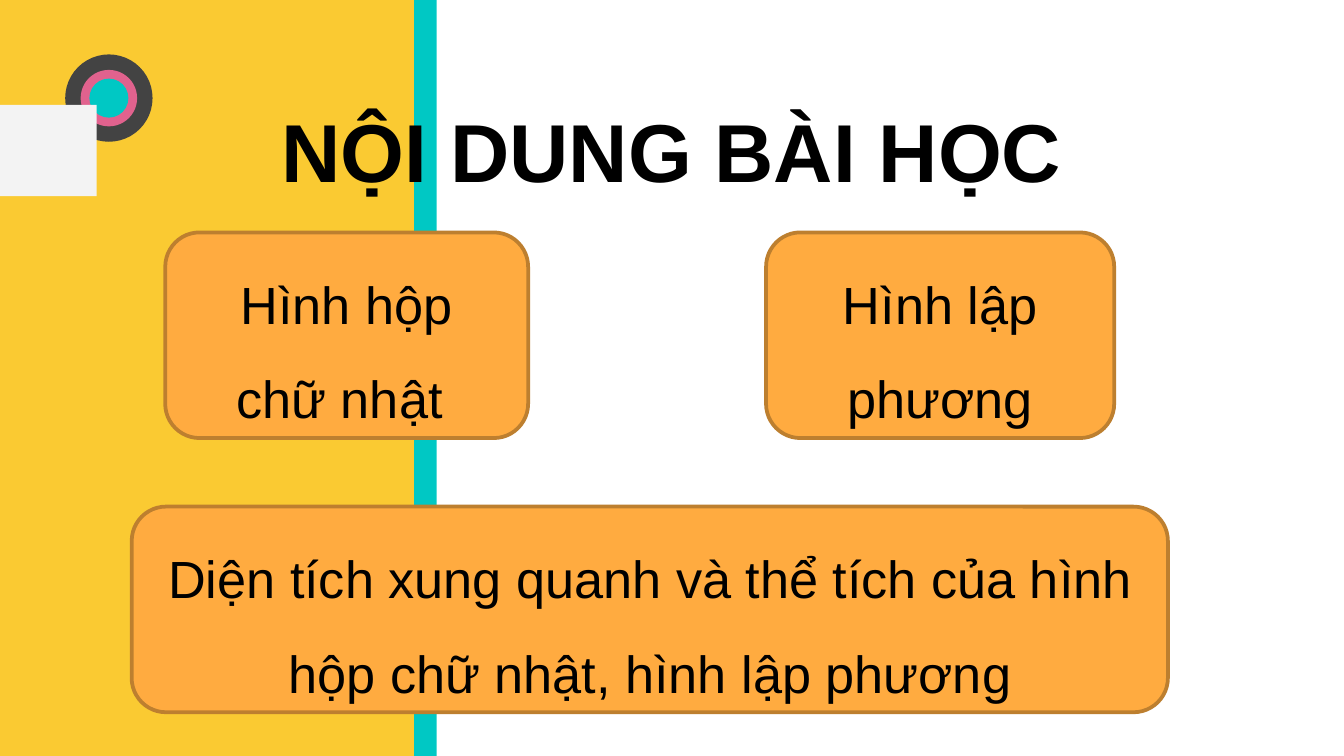
import pptx
import pptx.util
import pptx.dml.color
import pptx.enum.shapes
import pptx.enum.text
from dataclasses import dataclass
from pptx.util import Inches


@dataclass(frozen=True)
class Theme:
    font: str = "Arial"
    text: str = "000000"
    yellow: str = "FACA32"
    teal: str = "00C8C4"
    dark: str = "434343"
    pink: str = "E1628E"
    gray: str = "F3F3F3"
    card: str = "FFAB40"
    border: str = "BD7F2F"
    title_size: int = 44
    card_size: int = 28


theme = Theme()
color = pptx.dml.color.RGBColor.from_string
kinds = pptx.enum.shapes.MSO_SHAPE
anchors = pptx.enum.text.MSO_ANCHOR
slide_height = 10 * 9 / 16

presentation = pptx.Presentation()
presentation.slide_width = Inches(10)
presentation.slide_height = Inches(slide_height)
slide = presentation.slides.add_slide(presentation.slide_layouts[5])


def add_filled_shape(kind, left, top, width, height, fill):
    shape = slide.shapes.add_shape(
        kind, Inches(left), Inches(top), Inches(width), Inches(height))
    shape.shadow.inherit = False
    shape.fill.solid()
    shape.fill.fore_color.rgb = color(fill)
    shape.line.fill.background()
    return shape


def write_text(shape, text, size, bold, spacing, anchor, side_margin):
    frame = shape.text_frame
    frame.text = text
    frame.word_wrap = True
    frame.auto_size = pptx.enum.text.MSO_AUTO_SIZE.NONE
    frame.vertical_anchor = anchor
    frame.margin_left = frame.margin_right = Inches(side_margin)
    paragraph = frame.paragraphs[0]
    paragraph.alignment = pptx.enum.text.PP_ALIGN.CENTER
    paragraph.line_spacing = spacing
    font = paragraph.runs[0].font
    font.name = theme.font
    font.size = pptx.util.Pt(size)
    font.bold = bold
    font.color.rgb = color(theme.text)


for width, fill in [(3.25, theme.teal), (3.08, theme.yellow)]:
    add_filled_shape(kinds.RECTANGLE, 0, 0, width, slide_height, fill)

center_x, center_y = 0.81, 0.73
for diameter, fill in [(0.65, theme.dark), (0.42, theme.pink), (0.29, theme.teal)]:
    add_filled_shape(kinds.OVAL, center_x - diameter / 2, center_y - diameter / 2,
                     diameter, diameter, fill)

add_filled_shape(kinds.RECTANGLE, 0, 0.78, 0.72, 0.68, theme.gray)

title = slide.shapes.title
slide.shapes._spTree.append(title._element)
title.left, title.top = Inches(1.23), Inches(0.48)
title.width, title.height = Inches(7.54), Inches(0.9)
write_text(title, "NỘI DUNG BÀI HỌC", theme.title_size, True,
           pptx.util.Pt(72), anchors.TOP, 0)
title.text_frame.margin_top = title.text_frame.margin_bottom = 0

cards = [
    (1.23, 1.73, 2.7, 0.25, "Hình hộp chữ nhật "),
    (5.7, 1.73, 2.59, 0.1, "Hình lập phương"),
    (0.98, 3.77, 7.71, 0.1,
     "Diện tích xung quanh và thể tích của hình hộp chữ nhật, hình lập phương"),
]
for left, top, width, side_margin, text in cards:
    card = add_filled_shape(kinds.ROUNDED_RECTANGLE, left, top, width, 1.53, theme.card)
    card.line.color.rgb = color(theme.border)
    card.line.width = pptx.util.Pt(2)
    write_text(card, text, theme.card_size, False, 1.5, anchors.MIDDLE, side_margin)

presentation.save("out.pptx")
